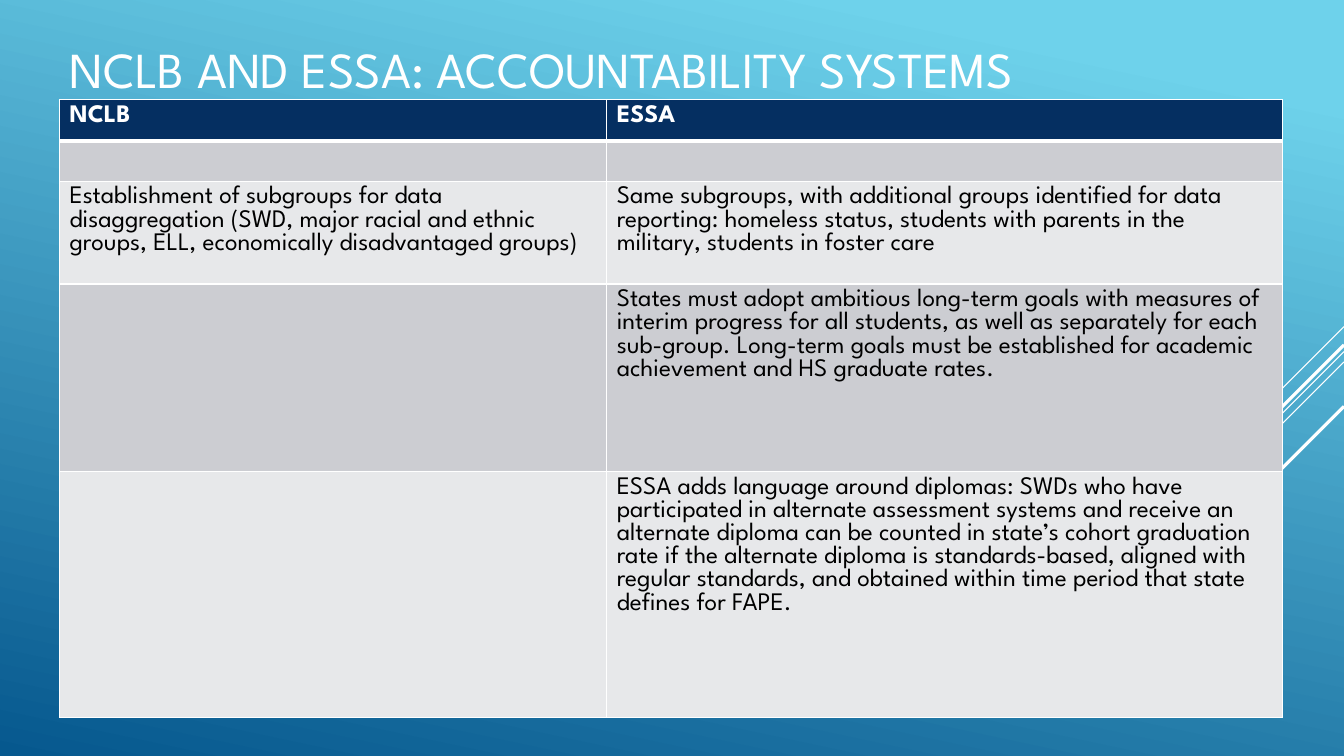
from lxml.etree import SubElement
from pptx import Presentation
from pptx.dml.color import RGBColor
from pptx.enum.shapes import MSO_CONNECTOR
from pptx.enum.text import MSO_ANCHOR
from pptx.oxml.ns import qn
from pptx.util import Cm, Pt

WHITE = RGBColor(0xFF, 0xFF, 0xFF)
BLACK = RGBColor(0x00, 0x00, 0x00)
SKY = RGBColor(0x6E, 0xD2, 0xEB)
OCEAN = RGBColor(0x06, 0x58, 0x8E)
NAVY = RGBColor(0x05, 0x2F, 0x61)
DARK_BAND = RGBColor(0xCC, 0xCD, 0xD2)
LIGHT_BAND = RGBColor(0xE7, 0xE8, 0xEA)

FONT = "League Spartan"
SLIDE_WIDTH, SLIDE_HEIGHT = 33.87, 19.05
LEFT, CONTENT_WIDTH = 1.5, 30.83

# Start height on the right edge, horizontal and vertical reach, line width
DIAGONALS = [
    (8.23, 2.54, 0.75),
    (8.86, 8.28, 0.75),
    (9.12, 5.26, 0.75),
    (8.69, 4.85, 2.25),
    (10.24, 3.53, 2.25),
]

COLUMN_WIDTHS = [13.79, 17.04]
ROW_HEIGHTS = [1.04, 0.97, 2.59, 4.72, 6.2]
ROWS = [
    ("NCLB", "ESSA"),
    ("", ""),
    ("Establishment of subgroups for data disaggregation (SWD, major racial and "
     "ethnic groups, ELL, economically disadvantaged groups)",
     "Same subgroups, with additional groups identified for data reporting: "
     "homeless status, students with parents in the military, students in foster care"),
    ("",
     "States must adopt ambitious long-term goals with measures of interim progress "
     "for all students, as well as separately for each sub-group. Long-term goals must "
     "be established for academic achievement and HS graduate rates."),
    ("",
     "ESSA adds language around diplomas: SWDs who have participated in alternate "
     "assessment systems and receive an alternate diploma can be counted in state’s "
     "cohort graduation rate if the alternate diploma is standards-based, aligned with "
     "regular standards, and obtained within time period that state defines for FAPE."),
]


def write_text(text_frame, text, size=18, color=BLACK, bold=False):
    """Fill the first paragraph; an empty one only gets its size."""
    paragraph = text_frame.paragraphs[0]
    if not text:
        paragraph._p.get_or_add_endParaRPr().set("sz", str(size * 100))
        return
    run = paragraph.add_run()
    run.text = text
    run.font.name = FONT
    run.font.size = Pt(size)
    run.font.bold = bold
    run.font.color.rgb = color


def paint_background(slide):
    fill = slide.background.fill
    fill.gradient()
    fill.gradient_angle = 258
    for stop, color, position in zip(fill.gradient_stops, (SKY, OCEAN), (0.1, 1)):
        stop.color.rgb = color
        stop.position = position


def add_diagonal(slide, top, reach, width):
    line = slide.shapes.add_connector(
        MSO_CONNECTOR.STRAIGHT,
        Cm(SLIDE_WIDTH), Cm(top), Cm(SLIDE_WIDTH - reach), Cm(top + reach))
    line.line.color.rgb = WHITE
    line.line.width = Pt(width)
    SubElement(line._element.spPr, qn("a:effectLst"))


def add_title(slide, text):
    box = slide.shapes.add_textbox(Cm(LEFT), Cm(0.41), Cm(CONTENT_WIDTH), Cm(4.19))
    text_frame = box.text_frame
    text_frame.word_wrap = True
    text_frame.vertical_anchor = MSO_ANCHOR.TOP
    text_frame.margin_top = Cm(0.56)
    write_text(text_frame, text, size=36, color=WHITE)


def set_borders(cell, **widths):
    """Draw white borders; widths in points are keyed by side: L, R, T, B."""
    properties = cell._tc.get_or_add_tcPr()
    for position, (side, width) in enumerate(widths.items()):
        border = properties.makeelement(qn(f"a:ln{side}"), {"w": str(Pt(width))})
        fill = SubElement(border, qn("a:solidFill"))
        SubElement(fill, qn("a:srgbClr"), val=str(WHITE))
        properties.insert(position, border)


def add_comparison_table(slide):
    frame = slide.shapes.add_table(
        len(ROWS), len(COLUMN_WIDTHS),
        Cm(LEFT), Cm(2.51), Cm(CONTENT_WIDTH), Cm(sum(ROW_HEIGHTS)))
    table = frame.table
    for column, width in zip(table.columns, COLUMN_WIDTHS):
        column.width = Cm(width)
    for row_index, (row, height, texts) in enumerate(zip(table.rows, ROW_HEIGHTS, ROWS)):
        row.height = Cm(height)
        header = row_index == 0
        band = DARK_BAND if row_index % 2 else LIGHT_BAND
        for cell, text in zip(row.cells, texts):
            write_text(cell.text_frame, text, color=WHITE if header else BLACK, bold=header)
            cell.fill.solid()
            cell.fill.fore_color.rgb = NAVY if header else band
            set_borders(cell, L=1, R=1, T=3 if row_index == 1 else 1, B=3 if header else 1)


def main():
    presentation = Presentation()
    presentation.slide_width = Cm(SLIDE_WIDTH)
    presentation.slide_height = Cm(SLIDE_HEIGHT)
    slide = presentation.slides.add_slide(presentation.slide_layouts[6])
    paint_background(slide)
    for top, reach, width in DIAGONALS:
        add_diagonal(slide, top, reach, width)
    add_title(slide, "NCLB AND ESSA: ACCOUNTABILITY SYSTEMS")
    add_comparison_table(slide)
    presentation.save("out.pptx")


if __name__ == "__main__":
    main()
